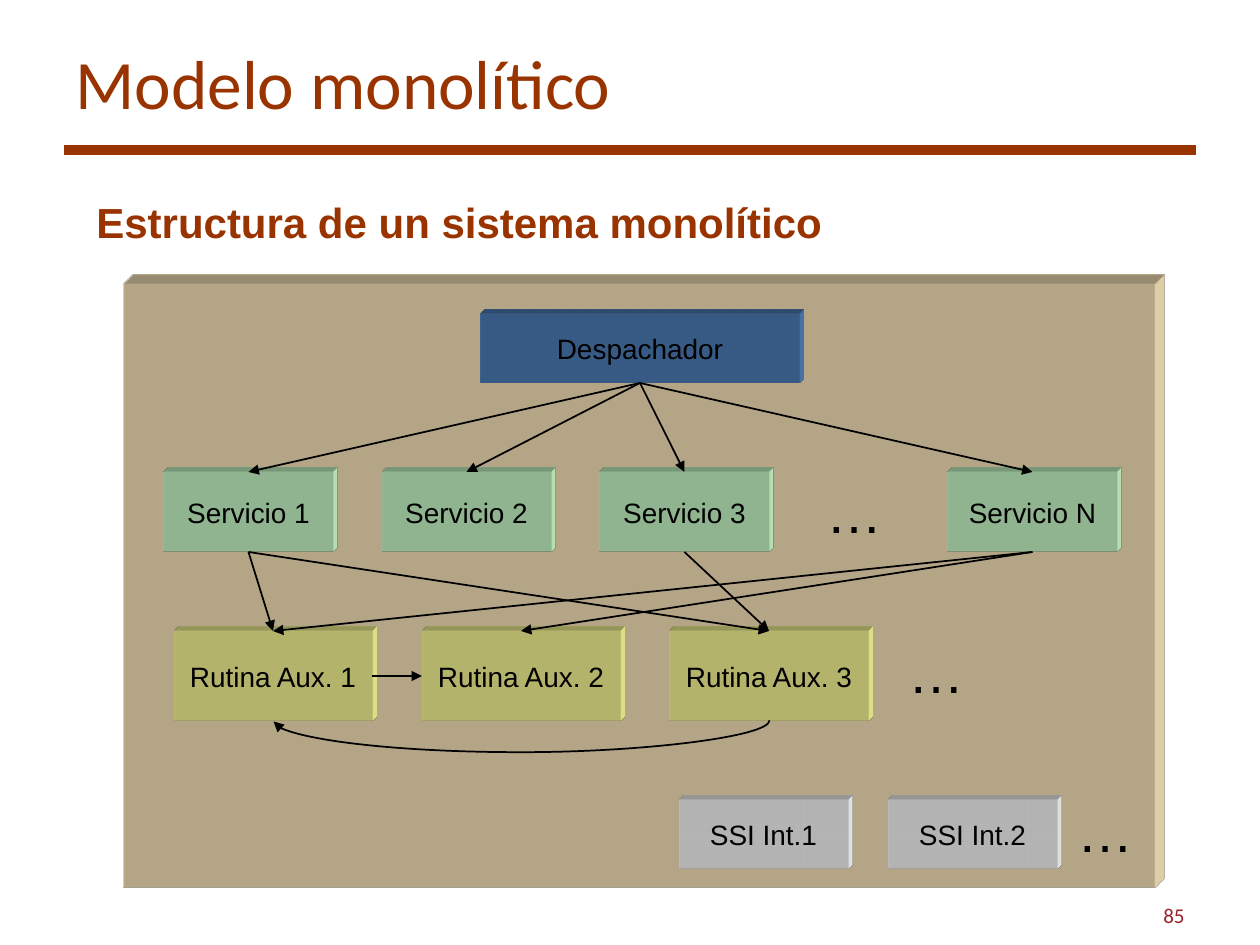
from dataclasses import dataclass

from lxml.etree import SubElement
from pptx import Presentation
from pptx.dml.color import RGBColor
from pptx.enum.shapes import MSO_CONNECTOR, MSO_SHAPE
from pptx.enum.text import MSO_ANCHOR, PP_ALIGN
from pptx.oxml.ns import qn
from pptx.shapes.autoshape import Shape
from pptx.shapes.connector import Connector
from pptx.slide import Slide
from pptx.text.text import TextFrame
from pptx.util import Emu, Pt

TOP, LEFT, BOTTOM, RIGHT = range(4)


@dataclass(frozen=True)
class Theme:
    accent: str = "993300"
    ink: str = "000000"
    number: str = "9B212C"
    kernel: str = "FFEABF"
    dispatcher: str = "4F81BD"
    service: str = "CCFFCC"
    routine: str = "FFFF99"
    interrupt: str = "FFFFFF"
    heading_font: str = "Calibri"
    body_font: str = "Arial"
    title_size: float = 39.6
    subtitle_size: float = 24
    label_size: float = 16
    dots_size: float = 32
    number_size: float = 12
    rule_width: float = 6
    arrow_width: float = 1
    kernel_depth: int = 28
    block_depth: int = 12


@dataclass(frozen=True)
class Block:
    label: str
    x: int
    y: int
    width: int
    height: int
    color: str


THEME = Theme()


def px(length: int) -> Emu:
    return Emu(round(length * 914400 / 126))


def write(frame: TextFrame, text: str, size: float, color: str,
          font: str = THEME.body_font, align: PP_ALIGN = PP_ALIGN.LEFT,
          bold: bool = False, wrap: bool = True) -> None:
    frame.word_wrap = wrap
    paragraph = frame.paragraphs[0]
    paragraph.alignment = align
    run = paragraph.add_run()
    run.text = text
    run.font.size = Pt(size)
    run.font.name = font
    run.font.bold = bold
    run.font.color.rgb = RGBColor.from_string(color)


def add_text_frame(slide: Slide, x: int, y: int, width: int, height: int) -> TextFrame:
    return slide.shapes.add_textbox(px(x), px(y), px(width), px(height)).text_frame


def extrude(shape: Shape, depth: int, color: str) -> None:
    properties = shape.element.spPr
    scene = SubElement(properties, qn("a:scene3d"))
    SubElement(scene, qn("a:camera"), prst="legacyObliqueTopRight")
    SubElement(scene, qn("a:lightRig"), rig="legacyFlat3", dir="b")
    solid = SubElement(properties, qn("a:sp3d"),
                       extrusionH=str(px(depth)), prstMaterial="legacyMatte")
    for bevel in ("a:bevelT", "a:bevelB"):
        SubElement(solid, qn(bevel), w="13500", h="13500", prst="angle")
    SubElement(SubElement(solid, qn("a:extrusionClr")), qn("a:srgbClr"), val=color)


def add_block(slide: Slide, block: Block, depth: int = THEME.block_depth) -> Shape:
    shape = slide.shapes.add_shape(MSO_SHAPE.RECTANGLE, px(block.x), px(block.y),
                                   px(block.width), px(block.height))
    shape.shadow.inherit = False
    shape.fill.solid()
    shape.fill.fore_color.rgb = RGBColor.from_string(block.color)
    shape.line.fill.background()
    extrude(shape, depth, block.color)
    if block.label:
        shape.text_frame.vertical_anchor = MSO_ANCHOR.MIDDLE
        write(shape.text_frame, block.label, THEME.label_size, THEME.ink,
              align=PP_ALIGN.CENTER, wrap=False)
    return shape


def style_line(line: Connector, color: str, width: float) -> None:
    line.line.color.rgb = RGBColor.from_string(color)
    line.line.width = Pt(width)
    SubElement(line.element.spPr, qn("a:effectLst"))


def add_arrow(slide: Slide, source: Shape, target: Shape,
              source_side: int = BOTTOM, target_side: int = TOP,
              kind: MSO_CONNECTOR = MSO_CONNECTOR.STRAIGHT) -> Connector:
    arrow = slide.shapes.add_connector(kind, 0, 0, 0, 0)
    arrow.begin_connect(source, source_side)
    arrow.end_connect(target, target_side)
    style_line(arrow, THEME.ink, THEME.arrow_width)
    SubElement(arrow.line._get_or_add_ln(), qn("a:tailEnd"), type="triangle")
    return arrow


def add_return_curve(slide: Slide, source: Shape, target: Shape, drop: int) -> None:
    curve = add_arrow(slide, source, target, BOTTOM, BOTTOM, MSO_CONNECTOR.CURVE)
    span = source.left - target.left
    middle = target.left + (span + target.width) // 2
    curve.left, curve.top = middle, source.top + source.height - span // 2
    curve.width, curve.height = px(1), span
    properties = curve.element.spPr
    frame = properties.find(qn("a:xfrm"))
    for flip in ("flipH", "flipV"):
        frame.attrib.pop(flip, None)
    frame.set("rot", str(90 * 60000))
    adjustments = properties.find(qn("a:prstGeom")).find(qn("a:avLst"))
    SubElement(adjustments, qn("a:gd"), name="adj1", fmla=f"val {drop * 100000}")


def main() -> None:
    deck = Presentation()
    deck.slide_width, deck.slide_height = px(1260), px(945)
    slide = deck.slides.add_slide(deck.slide_layouts[5])

    rule = slide.shapes.add_connector(MSO_CONNECTOR.STRAIGHT,
                                      px(64), px(150), px(1196), px(150))
    style_line(rule, THEME.accent, THEME.rule_width)

    title = slide.shapes.title
    title.left, title.top, title.width, title.height = px(63), px(38), px(1134), px(87)
    title.text_frame.vertical_anchor = MSO_ANCHOR.MIDDLE
    write(title.text_frame, "Modelo monolítico", THEME.title_size, THEME.accent,
          THEME.heading_font)

    subtitle = add_text_frame(slide, 84, 185, 833, 79)
    subtitle.margin_top = px(11)
    write(subtitle, "Estructura de un sistema monolítico", THEME.subtitle_size,
          THEME.accent, bold=True)

    add_block(slide, Block("", 124, 284, 1032, 605, THEME.kernel), THEME.kernel_depth)
    dispatcher = add_block(
        slide, Block("Despachador", 481, 314, 318, 69, THEME.dispatcher))
    services = [
        add_block(slide, Block(f"Servicio {name}", x, 472, 169, 80, THEME.service))
        for name, x in zip("123N", (164, 382, 600, 948))
    ]
    routines = [
        add_block(slide, Block(f"Rutina Aux. {i + 1}", 174 + 248 * i, 631, 198, 90,
                               THEME.routine))
        for i in range(3)
    ]
    for i in range(2):
        add_block(slide, Block(f"SSI Int.{i + 1}", 679 + 209 * i, 800, 169, 69,
                               THEME.interrupt))

    for x, y in ((814, 471), (896, 631), (1065, 790)):
        write(add_text_frame(slide, x, y, 81, 79), "…", THEME.dots_size, THEME.ink,
              align=PP_ALIGN.CENTER, wrap=False)

    for service in services:
        add_arrow(slide, dispatcher, service)
    for service, routine in ((0, 0), (0, 2), (3, 0), (3, 1), (2, 2)):
        add_arrow(slide, services[service], routines[routine])
    add_arrow(slide, routines[0], routines[1], RIGHT, LEFT)
    add_return_curve(slide, routines[2], routines[0], 32)

    page_number = add_text_frame(slide, 903, 890, 294, 50)
    page_number.vertical_anchor = MSO_ANCHOR.MIDDLE
    write(page_number, "85", THEME.number_size, THEME.number, THEME.heading_font,
          PP_ALIGN.RIGHT)

    deck.save("out.pptx")


if __name__ == "__main__":
    main()
